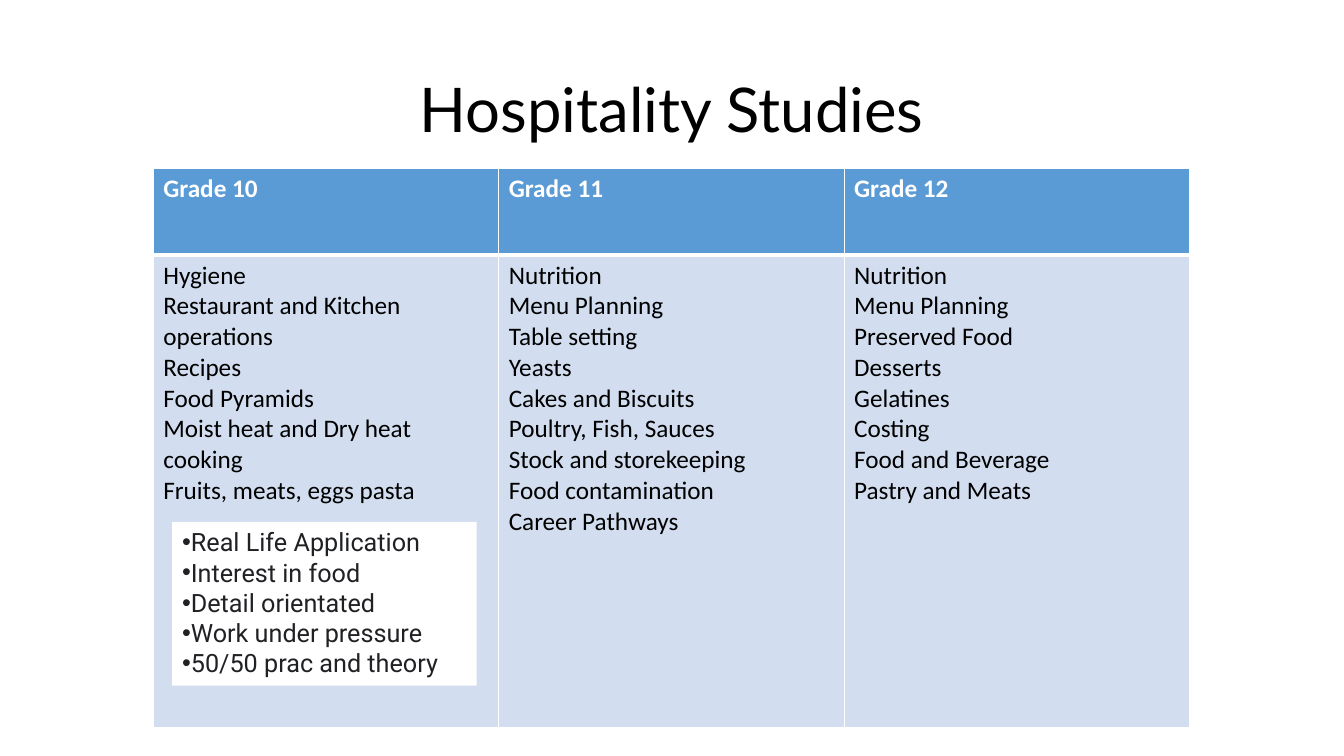
import lxml.etree
import pptx
import pptx.dml.color
import pptx.enum.shapes
import pptx.enum.text
import pptx.oxml.ns
import pptx.util

SCALE = 9525
HUES = {
    "white": "FFFFFF",
    "black": "000000",
    "head": "5B9BD5",
    "body": "D2DEEF",
    "ink": "202124",
}
GRADES = {
    "Grade 10": [
        "Hygiene",
        "Restaurant and Kitchen operations",
        "Recipes",
        "Food Pyramids",
        "Moist heat and Dry heat cooking",
        "Fruits, meats, eggs pasta",
    ],
    "Grade 11": [
        "Nutrition",
        "Menu Planning",
        "Table setting",
        "Yeasts",
        "Cakes and Biscuits",
        "Poultry, Fish, Sauces",
        "Stock and storekeeping",
        "Food contamination",
        "Career Pathways",
    ],
    "Grade 12": [
        "Nutrition",
        "Menu Planning",
        "Preserved Food",
        "Desserts",
        "Gelatines",
        "Costing",
        "Food and Beverage",
        "Pastry and Meats",
    ],
}
TRAITS = [
    "Real Life Application",
    "Interest in food",
    "Detail orientated",
    "Work under pressure",
    "50/50 prac and theory",
]
ALIGN = pptx.enum.text.PP_ALIGN
ANCHOR = pptx.enum.text.MSO_ANCHOR
FIT = pptx.enum.text.MSO_AUTO_SIZE


def px(*sizes):
    return [pptx.util.Emu(size * SCALE) for size in sizes]


def hue(name):
    return pptx.dml.color.RGBColor.from_string(HUES[name])


def style(item, values):
    for name, value in values.items():
        setattr(item, name, value)


def paint(item, name):
    item.fill.solid()
    item.fill.fore_color.rgb = hue(name)


def node(parent, tag, **values):
    return lxml.etree.SubElement(parent, pptx.oxml.ns.qn(tag), values)


def write(frame, lines, font, color, look):
    for index, line in enumerate(lines):
        para = frame.paragraphs[0] if index == 0 else frame.add_paragraph()
        style(para, look)
        run = para.add_run()
        run.text = line
        style(run.font, font)
        run.font.color.rgb = hue(color)


def border(cell, widths):
    props = cell._tc.get_or_add_tcPr()
    for side, width in widths.items():
        line = node(props, f"a:ln{side}", w=str(pptx.util.Pt(width)))
        node(node(line, "a:solidFill"), "a:srgbClr", val=HUES["white"])


def add_title(slide, text):
    frame = slide.shapes.add_textbox(*px(88, 38, 1104, 139)).text_frame
    style(frame, {"word_wrap": True, "vertical_anchor": ANCHOR.MIDDLE})
    font = {"name": "Lato", "size": pptx.util.Pt(44)}
    look = {"alignment": ALIGN.CENTER, "line_spacing": 0.9}
    write(frame, [text], font, "black", look)


def add_grades(slide, grades):
    area = px(146, 160, 329 * len(grades), 533)
    table = slide.shapes.add_table(2, len(grades), *area).table
    for row, height in zip(table.rows, px(83, 450)):
        row.height = height
    for index, (grade, topics) in enumerate(grades.items()):
        table.columns[index].width = px(329)[0]
        kinds = [
            ([grade], True, "white", "head", {"L": 1, "R": 1, "T": 1, "B": 3}),
            (topics, False, "black", "body", {"L": 1, "R": 1, "T": 3, "B": 1}),
        ]
        for row, (lines, bold, color, fill, widths) in enumerate(kinds):
            cell = table.cell(row, index)
            border(cell, widths)
            paint(cell, fill)
            font = {"name": "Calibri", "size": pptx.util.Pt(18), "bold": bold}
            write(cell.text_frame, lines, font, color, {})


def add_traits(slide, traits):
    kind = pptx.enum.shapes.MSO_SHAPE.RECTANGLE
    box = slide.shapes.add_shape(kind, *px(164, 497, 290, 156))
    box.shadow.inherit = False
    box.line.fill.background()
    paint(box, "white")
    frame = box.text_frame
    values = {
        "word_wrap": True,
        "vertical_anchor": ANCHOR.TOP,
        "auto_size": FIT.SHAPE_TO_FIT_TEXT,
    }
    style(frame, values)
    font = {"name": "Roboto", "size": pptx.util.Pt(18)}
    write(frame, traits, font, "ink", {"alignment": ALIGN.LEFT})
    for para in frame.paragraphs:
        props = para._p.get_or_add_pPr()
        node(props, "a:buFont", typeface="Arial")
        node(props, "a:buChar", char="•")


def main():
    deck = pptx.Presentation()
    deck.slide_width, deck.slide_height = px(1280, 720)
    slide = deck.slides.add_slide(deck.slide_layouts[6])
    add_title(slide, "Hospitality Studies")
    add_grades(slide, GRADES)
    add_traits(slide, TRAITS)
    deck.save("out.pptx")


if __name__ == "__main__":
    main()
